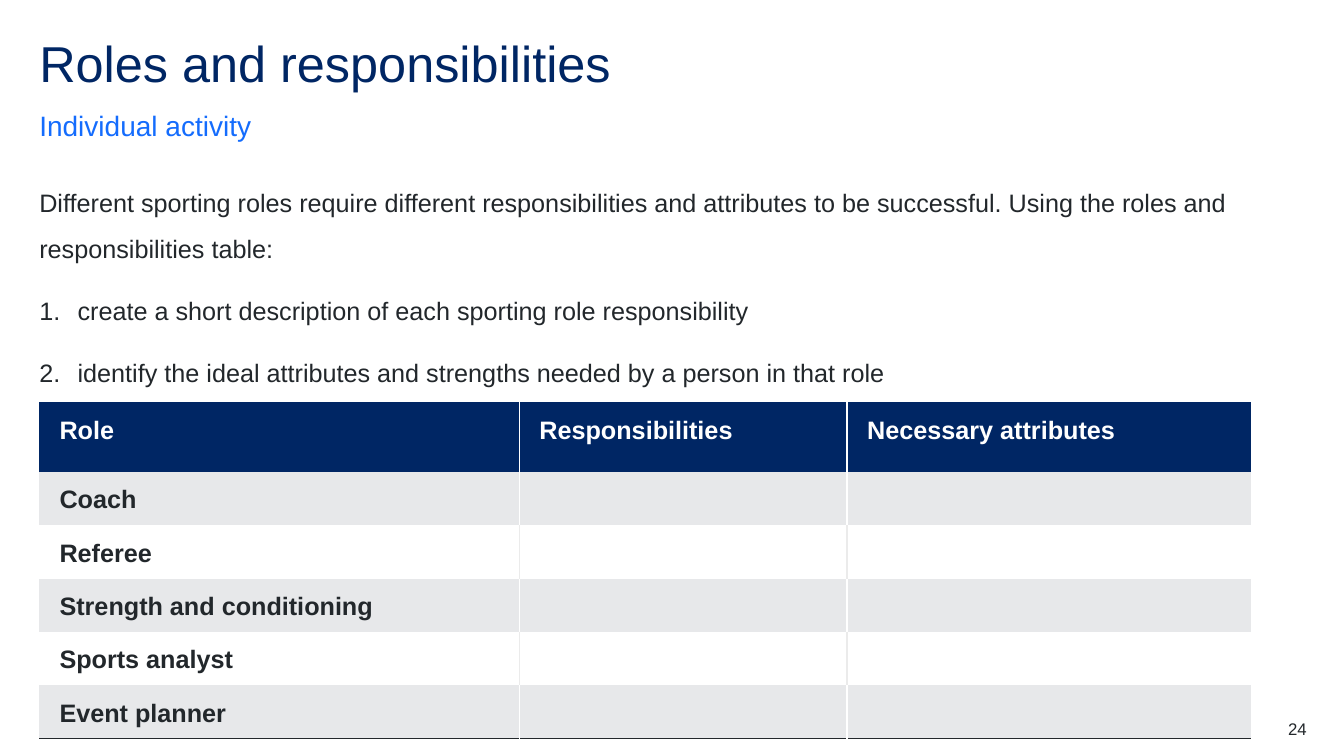
"""Build the slide on sporting roles and responsibilities."""
from lxml import etree
from pptx import Presentation
from pptx.dml.color import RGBColor
from pptx.enum import text
from pptx.oxml import ns
from pptx.util import Inches, Pt

NAVY = RGBColor(0x00, 0x26, 0x64)
BLUE = RGBColor(0x14, 0x6C, 0xFD)
DARK = RGBColor(0x22, 0x27, 0x2B)
WHITE = RGBColor(0xFF, 0xFF, 0xFF)
GREY = RGBColor(0xE7, 0xE8, 0xEA)
PALE = RGBColor(0xEB, 0xEB, 0xEB)
LEFT = 0.39
NO_STYLE = "{2D5ABB26-0587-4C30-8999-92F81FD0307C}"


def write(frame, lines, size=18, color=DARK, bold=False, spacing=1.5, after=12,
          align=text.PP_ALIGN.LEFT, anchor=text.MSO_ANCHOR.TOP, numbered_from=None):
    frame.word_wrap = True
    frame.vertical_anchor = anchor
    for index, line in enumerate(lines):
        paragraph = frame.paragraphs[0] if index == 0 else frame.add_paragraph()
        paragraph.alignment = align
        paragraph.line_spacing = spacing
        paragraph.space_after = Pt(after)
        if numbered_from is not None and index >= numbered_from:
            properties = paragraph._p.get_or_add_pPr()
            properties.set("marL", str(Inches(0.38)))
            properties.set("indent", str(-Inches(0.38)))
            etree.SubElement(properties, ns.qn("a:buAutoNum"), type="arabicPeriod")
        run = paragraph.add_run()
        run.text = line
        run.font.name = "Arial"
        run.font.size = Pt(size)
        run.font.bold = bold
        run.font.color.rgb = color


def add_border(cell, side, color):
    line = etree.SubElement(cell._tc.get_or_add_tcPr(), ns.qn(f"a:ln{side}"), w=str(Pt(1)))
    fill = etree.SubElement(line, ns.qn("a:solidFill"))
    etree.SubElement(fill, ns.qn("a:srgbClr"), val=str(color))


presentation = Presentation()
presentation.slide_width = Inches(13.33)
presentation.slide_height = Inches(7.5)
slide = presentation.slides.add_slide(presentation.slide_layouts[6])

intro = [
    "Different sporting roles require different responsibilities and attributes to be successful. "
    "Using the roles and responsibilities table:",
    "create a short description of each sporting role responsibility",
    "identify the ideal attributes and strengths needed by a person in that role",
]
text_boxes = [
    ((LEFT, 0.39, 12.56, 0.6), ["Roles and responsibilities"],
     dict(size=36, color=NAVY, spacing=0.9, after=0)),
    ((LEFT, 1.07, 12.56, 0.34), ["Individual activity"],
     dict(size=20, color=BLUE, anchor=text.MSO_ANCHOR.BOTTOM)),
    ((LEFT, 1.71, 12.46, 2.38), intro, dict(numbered_from=1)),
    ((12.17, 7.13, 0.79, 0.2), ["24"],
     dict(size=12, spacing=1.0, after=0, align=text.PP_ALIGN.RIGHT)),
]
for position, lines, style in text_boxes:
    frame = slide.shapes.add_textbox(*map(Inches, position)).text_frame
    frame.margin_left = frame.margin_right = frame.margin_top = frame.margin_bottom = 0
    write(frame, lines, **style)

headings = ["Role", "Responsibilities", "Necessary attributes"]
roles = ["Coach", "Referee", "Strength and conditioning", "Sports analyst", "Event planner"]
rows = [headings] + [[role, "", ""] for role in roles]
column_widths = [4.76, 3.25, 4.01]
graphic = slide.shapes.add_table(len(rows), len(headings), Inches(LEFT), Inches(3.99),
                                 Inches(sum(column_widths)), Inches(3.34))
table = graphic.table
table.horz_banding = False
table._tbl.tblPr.find(ns.qn("a:tableStyleId")).text = NO_STYLE
for column, width in zip(table.columns, column_widths):
    column.width = Inches(width)

for row_index, row in enumerate(rows):
    is_header = row_index == 0
    is_white = not is_header and row_index % 2 == 0
    table.rows[row_index].height = Inches(0.69 if is_header else 0.53)
    for column_index, label in enumerate(row):
        cell = table.cell(row_index, column_index)
        divider = PALE if is_white else WHITE
        if column_index > 0:
            add_border(cell, "L", divider)
        if column_index < len(row) - 1:
            add_border(cell, "R", divider)
        if row_index == len(rows) - 1:
            add_border(cell, "B", DARK)
        cell.fill.solid()
        cell.fill.fore_color.rgb = NAVY if is_header else WHITE if is_white else GREY
        cell.margin_left, cell.margin_right = Inches(0.2), Inches(0.07)
        cell.margin_top = cell.margin_bottom = 0
        if label:
            write(cell.text_frame, [label], bold=True, color=WHITE if is_header else DARK)

presentation.save("out.pptx")
